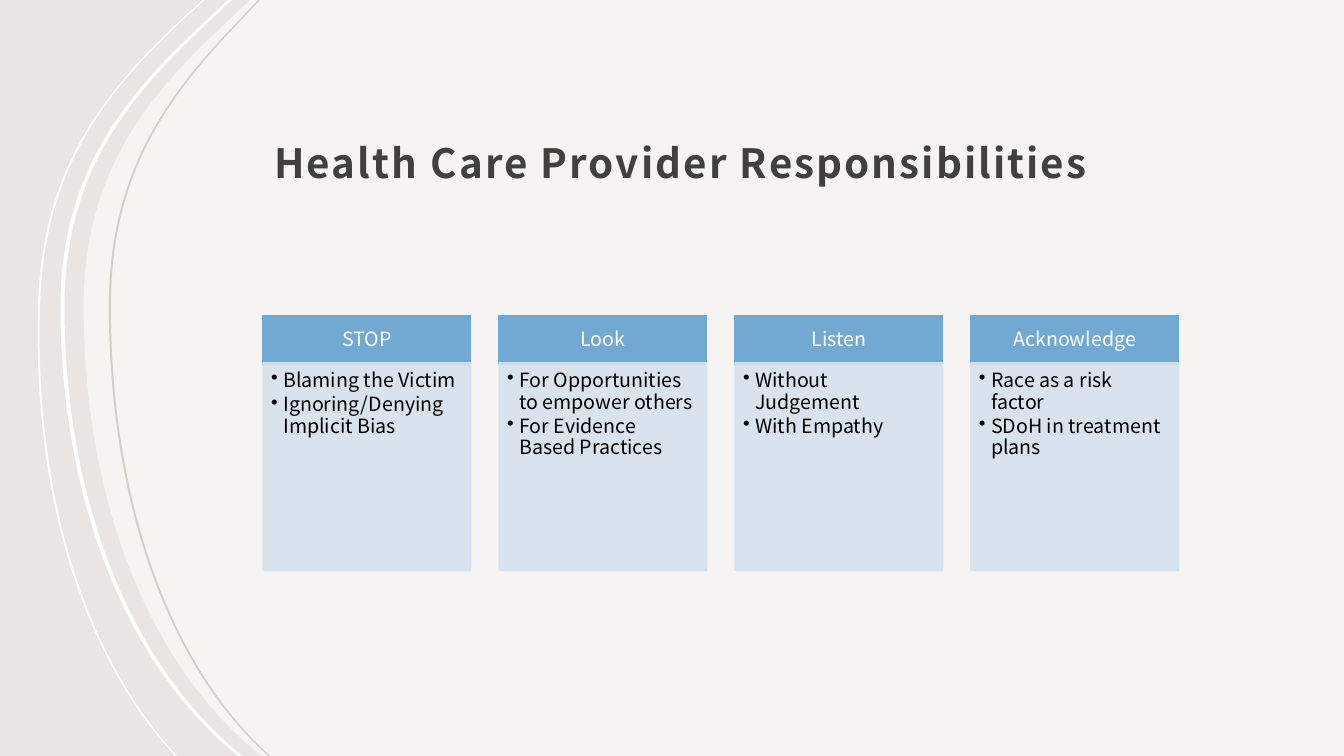
from pptx import Presentation
from pptx.dml.color import RGBColor
from pptx.enum.shapes import MSO_SHAPE
from pptx.enum.text import MSO_ANCHOR, PP_ALIGN
from pptx.oxml.ns import qn
from pptx.util import Inches, Pt
from lxml.etree import SubElement

FONT = "Noto Sans CJK JP"
BACKGROUND = RGBColor(0xE8, 0xE5, 0xE2)
WHITE = RGBColor(0xFF, 0xFF, 0xFF)
BLACK = RGBColor(0, 0, 0)
TAUPE = RGBColor(0xD4, 0xCE, 0xC8)
DARK = RGBColor(0x40, 0x40, 0x40)
BLUE = RGBColor(0x72, 0xA9, 0xD2)
PALE_BLUE = RGBColor(0xD5, 0xE2, 0xEE)

WIDTH, HEIGHT = 13.33, 7.5

# Edges run from the slide's foot to its top: the first and last points are
# joined by lines, the seven between them are two cubic curves.
PANEL_EDGE = [(2.59, 7.5), (2.57, 7.48), (1.45, 6.57), (0.83, 4.92), (0.83, 3.04),
              (0.83, 1.79), (1.39, 1.04), (2.11, 0.35), (2.48, 0)]
RIBBONS = [
    ([(1.73, 7.5), (1.71, 7.47), (0.78, 6.45), (0.31, 4.8), (0.38, 2.97),
      (0.43, 1.68), (1.02, 0.93), (1.75, 0.24), (2.01, 0)], 0.02, WHITE),
    ([(2.37, 7.5), (2.34, 7.48), (1.23, 6.57), (0.6, 4.92), (0.6, 3.04),
      (0.6, 1.79), (1.17, 1.04), (1.89, 0.35), (2.26, 0)], 0.04, WHITE),
    ([(2.66, 7.5), (2.64, 7.48), (1.64, 6.57), (1.08, 4.92), (1.08, 3.04),
      (1.08, 1.79), (1.59, 1.04), (2.23, 0.35), (2.56, 0)], 0.02, TAUPE),
]

CARDS = [
    ("STOP", ["Blaming the Victim", "Ignoring/Denying Implicit Bias"]),
    ("Look", ["For Opportunities to empower others", "For Evidence Based Practices"]),
    ("Listen", ["Without Judgement", "With Empathy"]),
    ("Acknowledge", ["Race as a risk factor", "SDoH in treatment plans"]),
]
CARD_LEFT, CARD_WIDTH, CARD_PITCH = 2.61, 2.06, 2.34
HEAD_TOP, HEAD_HEIGHT = 3.13, 0.48
BODY_TOP, BODY_HEIGHT = 3.6, 2.06


def edge_segments(edge):
    """Split an edge into segments: one point is a line, three are a curve."""
    return [edge[:1], edge[1:2], edge[2:5], edge[5:8], edge[8:]]


def set_alpha(fill_parent, percent):
    """Make the solid fill inside an XML element partly transparent."""
    color = fill_parent.find(qn("a:solidFill"))[0]
    SubElement(color, qn("a:alpha"), val=str(percent * 1000))


class SlideBuilder:
    def __init__(self, slide):
        self.slide = slide

    def background(self, color):
        fill = self.slide.background.fill
        fill.solid()
        fill.fore_color.rgb = color

    def outline(self, segments, color, alpha=100):
        """Draw a closed outline of line and curve segments."""
        ends = [(Inches(seg[-1][0]), Inches(seg[-1][1])) for seg in segments]
        builder = self.slide.shapes.build_freeform(*ends[0])
        builder.add_line_segments(ends[1:])
        sp = builder.convert_to_shape()
        lines = list(sp.element.iter(qn("a:lnTo")))
        for line, seg in zip(lines, segments[1:]):
            if len(seg) == 3:
                curve = SubElement(line.getparent(), qn("a:cubicBezTo"))
                for x, y in seg:
                    SubElement(curve, qn("a:pt"), x=str(Inches(x) - sp.left),
                               y=str(Inches(y) - sp.top))
                line.getparent().replace(line, curve)
        sp.shadow.inherit = False
        sp.fill.solid()
        sp.fill.fore_color.rgb = color
        sp.line.fill.background()
        if alpha < 100:
            set_alpha(sp.element.spPr, alpha)

    def ribbon(self, edge, thickness, color):
        back = [(x + thickness, y) for x, y in reversed(edge)]
        down = [back[:1], back[1:2], back[2:5], back[5:8], back[8:]]
        self.outline(edge_segments(edge) + down, color)

    def margins(self, tf, left, top, right, bottom):
        tf.margin_left, tf.margin_top = Inches(left), Inches(top)
        tf.margin_right, tf.margin_bottom = Inches(right), Inches(bottom)

    def format_runs(self, p, size, color, bold=False):
        for r in p.runs:
            r.font.name = FONT
            r.font.size = Pt(size)
            r.font.color.rgb = color
            r.font.bold = bold

    def title(self, text):
        sp = self.slide.shapes.title
        sp.left, sp.top = Inches(2.6), Inches(0.48)
        sp.width, sp.height = Inches(9.18), Inches(1.47)
        tf = sp.text_frame
        tf.text = text
        tf.word_wrap = True
        tf.vertical_anchor = MSO_ANCHOR.BOTTOM
        self.margins(tf, 0.12, 0.12, 0.12, 0.1)
        p = tf.paragraphs[0]
        p.alignment = PP_ALIGN.LEFT
        p.line_spacing = 1.3
        self.format_runs(p, 28.8, DARK, bold=True)
        p.runs[0].font._element.set("spc", "150")
        # Bring the title in front of the background panel.
        self.slide.shapes.element.append(sp.element)

    def box(self, left, top, height, color, text, text_color, alpha=100):
        sp = self.slide.shapes.add_shape(
            MSO_SHAPE.RECTANGLE, Inches(left), Inches(top), Inches(CARD_WIDTH), Inches(height))
        sp.shadow.inherit = False
        sp.fill.solid()
        sp.fill.fore_color.rgb = color
        sp.line.color.rgb = color
        sp.line.width = Pt(1)
        if alpha < 100:
            set_alpha(sp.element.spPr, alpha)
            set_alpha(sp.element.spPr.find(qn("a:ln")), alpha)
        tf = sp.text_frame
        tf.text = text
        tf.word_wrap = True
        for p in tf.paragraphs:
            p.line_spacing = 0.9
            self.format_runs(p, 14, text_color)
        return tf

    def card(self, left, heading, bullets):
        tf = self.box(left, HEAD_TOP, HEAD_HEIGHT, BLUE, heading, WHITE)
        tf.vertical_anchor = MSO_ANCHOR.MIDDLE
        self.margins(tf, 0.11, 0.06, 0.11, 0.06)
        tf.paragraphs[0].alignment = PP_ALIGN.CENTER

        tf = self.box(left, BODY_TOP, BODY_HEIGHT, PALE_BLUE,
                      "\n".join(bullets), BLACK, alpha=90)
        tf.vertical_anchor = MSO_ANCHOR.TOP
        self.margins(tf, 0.08, 0.08, 0.11, 0.12)
        for p in tf.paragraphs:
            p.level = 1
            p.alignment = PP_ALIGN.LEFT
            p.space_after = Pt(2.1)
            pPr = p._p.get_or_add_pPr()
            pPr.set("marL", str(Inches(0.12)))
            pPr.set("indent", str(-Inches(0.12)))
            SubElement(pPr, qn("a:buChar"), char="•")


def main():
    prs = Presentation()
    prs.slide_width, prs.slide_height = Inches(WIDTH), Inches(HEIGHT)
    s = SlideBuilder(prs.slides.add_slide(prs.slide_layouts[5]))
    s.background(BACKGROUND)
    right_side = [[(WIDTH, 0)], [(WIDTH, HEIGHT)]]
    s.outline(edge_segments(PANEL_EDGE) + right_side, WHITE, alpha=60)
    for edge, thickness, color in RIBBONS:
        s.ribbon(edge, thickness, color)
    s.title("Health Care Provider Responsibilities")
    for i, (heading, bullets) in enumerate(CARDS):
        s.card(CARD_LEFT + i * CARD_PITCH, heading, bullets)
    prs.save("out.pptx")


if __name__ == "__main__":
    main()
